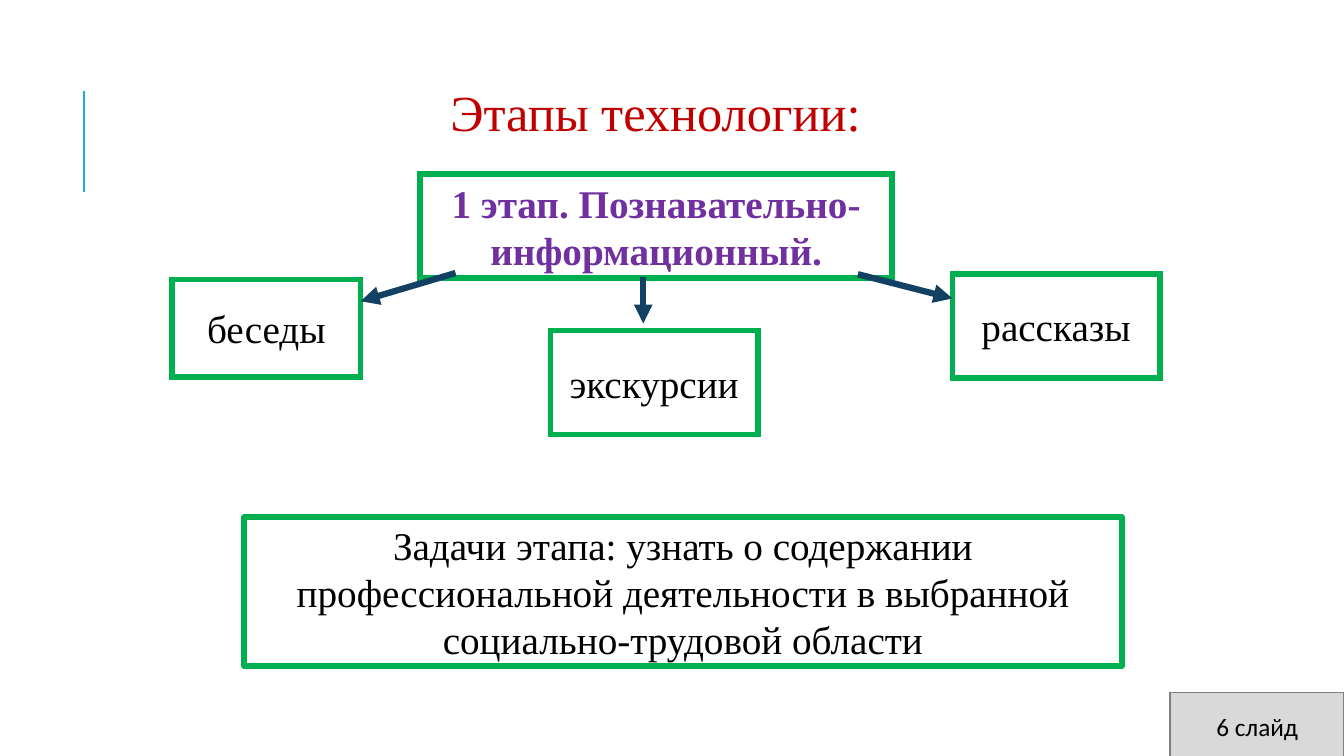
from lxml import etree
from pptx import Presentation
from pptx.dml.color import RGBColor
from pptx.enum.shapes import MSO_CONNECTOR, MSO_SHAPE
from pptx.enum.text import MSO_ANCHOR, MSO_AUTO_SIZE, PP_ALIGN
from pptx.oxml.ns import qn
from pptx.util import Cm, Pt

RECTANGLE = MSO_SHAPE.RECTANGLE
STRAIGHT = MSO_CONNECTOR.STRAIGHT
CENTER = PP_ALIGN.CENTER
TOP, MIDDLE = MSO_ANCHOR.TOP, MSO_ANCHOR.MIDDLE
NO_AUTOFIT = MSO_AUTO_SIZE.NONE
TITLE_ONLY = 5

COLORS = {
    "white": "FFFFFF", "black": "000000", "title": "C00000",
    "stage": "7030A0", "frame": "00B050", "arrow": "134163",
    "accent": "1CADE4", "badge": "D9D9D9", "badge_edge": "808080",
}
SERIF, SANS = "Times New Roman", "Calibri"


def rgb(name):
    return RGBColor.from_string(COLORS[name])


def write(frame, text, *, size=28, font=SERIF, color="black", bold=False,
          anchor=MIDDLE):
    frame.word_wrap = True
    frame.auto_size = NO_AUTOFIT
    frame.vertical_anchor = anchor
    paragraph = frame.paragraphs[0]
    paragraph.alignment = CENTER
    run = paragraph.add_run()
    run.text = text
    run.font.name = font
    run.font.size = Pt(size)
    run.font.bold = bold
    run.font.color.rgb = rgb(color)
    return paragraph


def add_box(slide, text, place, *, fill="white", edge="frame", width=4,
            sharp=True, **text_format):
    box = slide.shapes.add_shape(RECTANGLE, *map(Cm, place))
    box.shadow.inherit = False
    box.fill.solid()
    box.fill.fore_color.rgb = rgb(fill)
    box.line.color.rgb = rgb(edge)
    box.line.width = Pt(width)
    join = etree.SubElement(box.line._get_or_add_ln(),
                            qn("a:miter" if sharp else "a:round"))
    if sharp:
        join.set("lim", "800000")
    write(box.text_frame, text, **text_format)


def add_line(slide, ends, *, color, width, arrow=False):
    line = slide.shapes.add_connector(STRAIGHT, *map(Cm, ends))
    line.line.color.rgb = rgb(color)
    line.line.width = Pt(width)
    if arrow:
        etree.SubElement(line.line._get_or_add_ln(), qn("a:tailEnd"),
                         type="triangle")
    etree.SubElement(line._element.spPr, qn("a:effectLst"))


def add_title(slide, text, place):
    title = slide.shapes.title
    title.left, title.top, title.width, title.height = map(Cm, place)
    frame = title.text_frame
    frame.margin_left = frame.margin_right = Cm(0.13)
    frame.margin_top = frame.margin_bottom = Cm(0.13)
    paragraph = write(frame, text, size=36, color="title", anchor=TOP)
    paragraph.line_spacing = 0.9
    paragraph.space_before = Pt(12)
    paragraph.space_after = Pt(2)


def main():
    prs = Presentation()
    prs.slide_width, prs.slide_height = Cm(33.87), Cm(19.05)
    slide = prs.slides.add_slide(prs.slide_layouts[TITLE_ONLY])

    # Heading with its accent line
    add_line(slide, (2.11, 4.83, 2.11, 2.29), color="accent", width=1.5)
    add_title(slide, "Этапы технологии:", (4.8, 2.08, 23.44, 2.29))

    # Forms of work and the stage they belong to
    for activity, place in (
        ("рассказы", (24, 6.91, 5.23, 2.62)),
        ("экскурсии", (13.87, 8.33, 5.23, 2.62)),
        ("беседы", (4.34, 7.04, 4.75, 2.46)),
    ):
        add_box(slide, activity, place)
    add_box(slide, "1 этап. Познавательно-информационный.",
            (10.59, 4.39, 11.89, 2.62), color="stage", bold=True)

    # Arrows from the stage to each form of work
    for ends in (
        (21.62, 6.91, 24, 7.52),
        (16.21, 6.99, 16.21, 8.15),
        (11.48, 6.88, 9.09, 7.59),
    ):
        add_line(slide, ends, color="arrow", width=4.5, arrow=True)

    # Tasks of the stage
    add_box(slide, "Задачи этапа: узнать о содержании профессиональной "
            "деятельности в выбранной социально-трудовой области",
            (6.15, 13.03, 22.12, 3.76), sharp=False)

    # Slide number badge
    add_box(slide, "6 слайд", (29.49, 17.45, 4.39, 1.73), fill="badge",
            edge="badge_edge", width=1.25, size=18, font=SANS)

    prs.save("out.pptx")


if __name__ == "__main__":
    main()
